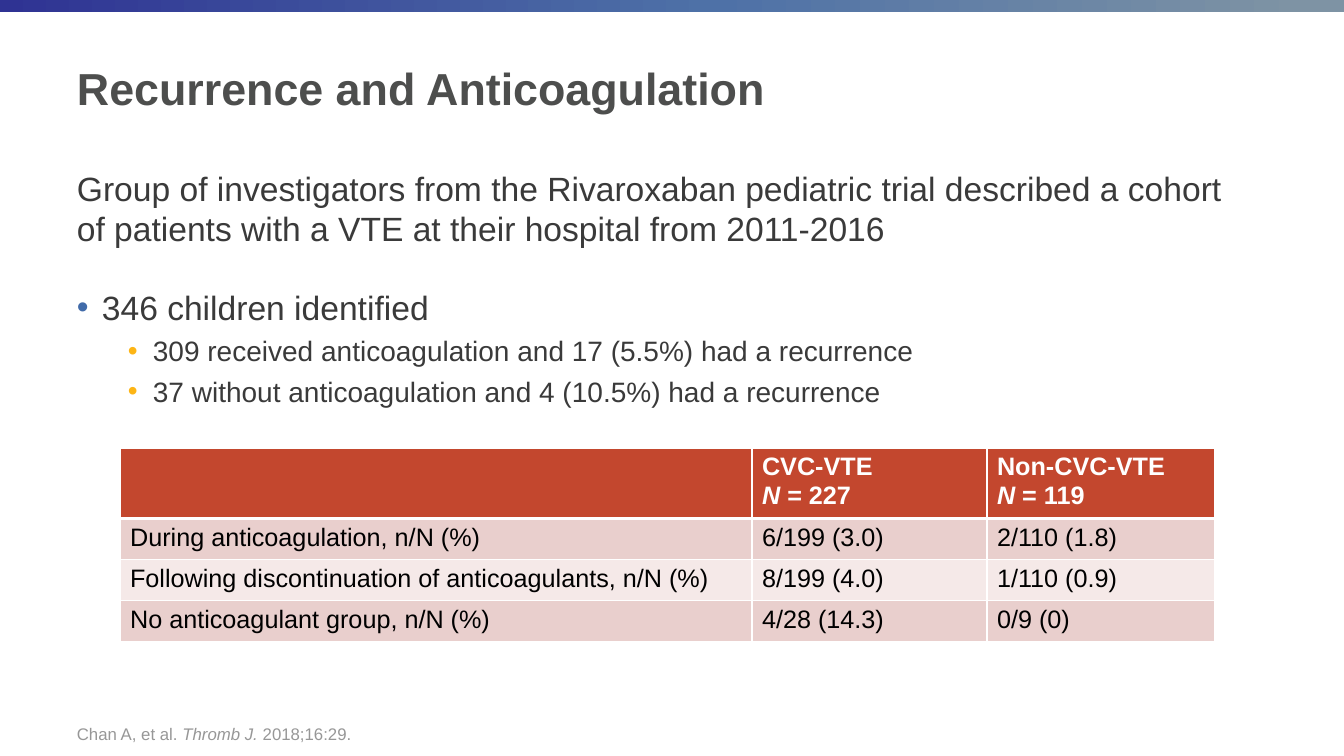
from copy import deepcopy

from lxml import etree
from pptx import Presentation
from pptx.dml.color import RGBColor
from pptx.enum.shapes import MSO_SHAPE
from pptx.enum.text import MSO_ANCHOR
from pptx.oxml.ns import qn
from pptx.util import Pt

RECTANGLE = MSO_SHAPE.RECTANGLE
TOP, MIDDLE, BOTTOM = MSO_ANCHOR.TOP, MSO_ANCHOR.MIDDLE, MSO_ANCHOR.BOTTOM

FONT = "Arial"
COLORS = {
    "title": "4D4E4D", "body": "3A3A3A", "citation": "979797",
    "bullet": "416BA9", "sub_bullet": "FDB515",
    "header": "C3472E", "odd_row": "E9CFCD", "even_row": "F5E9E8",
    "white": "FFFFFF", "black": "000000",
    "band_start": "2F3393", "band_middle": "4E71A7", "band_end": "7E93A4",
}
BAND_STOPS = [(0, "band_start"), (0.53, "band_middle"), (0.97, "band_end")]

TITLE = "Recurrence and Anticoagulation"
# text, size, space before in points, bullet colour, indent in px
BODY = [
    ("Group of investigators from the Rivaroxaban pediatric trial described a cohort "
     "of patients with a VTE at their hospital from 2011-2016", 24, 0, None, 0),
    ("346 children identified", 24, 27, "bullet", 25),
    ("309 received anticoagulation and 17 (5.5%) had a recurrence", 20, 5, "sub_bullet", 76),
    ("37 without anticoagulation and 4 (10.5%) had a recurrence", 20, 5, "sub_bullet", 76),
]
CITATION = [("Chan A, et al. ", False), ("Thromb J. ", True), ("2018;16:29.", False)]
GROUPS = [("CVC-VTE", 227), ("Non-CVC-VTE", 119)]
RECURRENCES = [
    ("During anticoagulation, n/N (%)", "6/199 (3.0)", "2/110 (1.8)"),
    ("Following discontinuation of anticoagulants, n/N (%)", "8/199 (4.0)", "1/110 (0.9)"),
    ("No anticoagulant group, n/N (%)", "4/28 (14.3)", "0/9 (0)"),
]

SLIDE_W, SLIDE_H = 1344, 756
BAND_H = 12
TEXT_X, TEXT_W = 67, 1184
TABLE_X, TABLE_Y = 120, 448
COLUMN_WIDTHS = [632, 235, 228]
ROW_HEIGHTS = [66, 41, 41, 41]
HANGING = 25
TABLE_SIZE = 18


def px(length):
    return round(length * 914400 / 100.8)


def rgb(name):
    return RGBColor.from_string(COLORS[name])


def add_run(paragraph, text, size, color, bold=False, italic=False):
    run = paragraph.add_run()
    run.text = text
    font = run.font
    font.name, font.size, font.bold, font.italic = FONT, Pt(size), bold, italic
    font.color.rgb = rgb(color)


def add_text_frame(slide, top, height, anchor):
    frame = slide.shapes.add_textbox(px(TEXT_X), px(top), px(TEXT_W), px(height)).text_frame
    frame.word_wrap = True
    frame.vertical_anchor = anchor
    return frame


def add_bullet(paragraph, color, indent):
    properties = paragraph._p.get_or_add_pPr()
    properties.set("marL", str(px(indent)))
    properties.set("indent", str(-px(HANGING)))
    bullet_color = etree.SubElement(properties, qn("a:buClr"))
    etree.SubElement(bullet_color, qn("a:srgbClr"), val=COLORS[color])
    etree.SubElement(properties, qn("a:buFont"), typeface=FONT)
    etree.SubElement(properties, qn("a:buChar"), char="•")


def style_cell(cell, fill, row):
    """Give the cell white borders, thick under the header, and its fill."""
    properties = cell._tc.get_or_add_tcPr()
    widths = {"lnL": 1, "lnR": 1, "lnT": 3 if row == 1 else 1, "lnB": 3 if row == 0 else 1}
    for side, width in widths.items():
        line = etree.SubElement(properties, qn(f"a:{side}"), w=str(Pt(width)))
        solid = etree.SubElement(line, qn("a:solidFill"))
        etree.SubElement(solid, qn("a:srgbClr"), val=COLORS["white"])
    cell.fill.solid()
    cell.fill.fore_color.rgb = rgb(fill)


def add_band(slide):
    band = slide.shapes.add_shape(RECTANGLE, 0, 0, px(SLIDE_W), px(BAND_H))
    band.shadow.inherit = False
    band.line.fill.background()
    band.fill.gradient()
    band.fill.gradient_angle = 0
    stop_list = band._element.spPr.find(".//" + qn("a:gsLst"))
    stop_list.append(deepcopy(stop_list[-1]))
    for stop, (position, color) in zip(band.fill.gradient_stops, BAND_STOPS):
        stop.position = position
        stop.color.rgb = rgb(color)


def add_body(slide):
    frame = add_text_frame(slide, 163, 520, TOP)
    for i, (text, size, space, bullet, indent) in enumerate(BODY):
        paragraph = frame.add_paragraph() if i else frame.paragraphs[0]
        paragraph.space_before = Pt(space)
        if bullet:
            add_bullet(paragraph, bullet, indent)
        add_run(paragraph, text, size, "body")


def add_recurrence_table(slide):
    table = slide.shapes.add_table(
        len(ROW_HEIGHTS), len(COLUMN_WIDTHS), px(TABLE_X), px(TABLE_Y),
        px(sum(COLUMN_WIDTHS)), px(sum(ROW_HEIGHTS))).table
    for column, width in zip(table.columns, COLUMN_WIDTHS):
        column.width = px(width)
    for row, height in zip(table.rows, ROW_HEIGHTS):
        row.height = px(height)

    for c in range(len(COLUMN_WIDTHS)):
        style_cell(table.cell(0, c), "header", 0)
    for c, (group, count) in enumerate(GROUPS, 1):
        heading = table.cell(0, c).text_frame.paragraphs[0]
        add_run(heading, group, TABLE_SIZE, "white", bold=True)
        heading.add_line_break()
        add_run(heading, "N", TABLE_SIZE, "white", bold=True, italic=True)
        add_run(heading, f" = {count}", TABLE_SIZE, "white", bold=True)

    for r, values in enumerate(RECURRENCES, 1):
        for c, value in enumerate(values):
            cell = table.cell(r, c)
            style_cell(cell, "odd_row" if r % 2 else "even_row", r)
            add_run(cell.text_frame.paragraphs[0], value, TABLE_SIZE, "black")


def main():
    deck = Presentation()
    deck.slide_width, deck.slide_height = px(SLIDE_W), px(SLIDE_H)
    slide = deck.slides.add_slide(deck.slide_layouts[6])

    add_band(slide)
    citation = add_text_frame(slide, 701, 48, BOTTOM).paragraphs[0]
    for text, italic in CITATION:
        add_run(citation, text, 12, "citation", italic=italic)
    title = add_text_frame(slide, 22, 131, MIDDLE).paragraphs[0]
    add_run(title, TITLE, 32, "title", bold=True)
    add_body(slide)
    add_recurrence_table(slide)

    deck.save("out.pptx")


if __name__ == "__main__":
    main()
